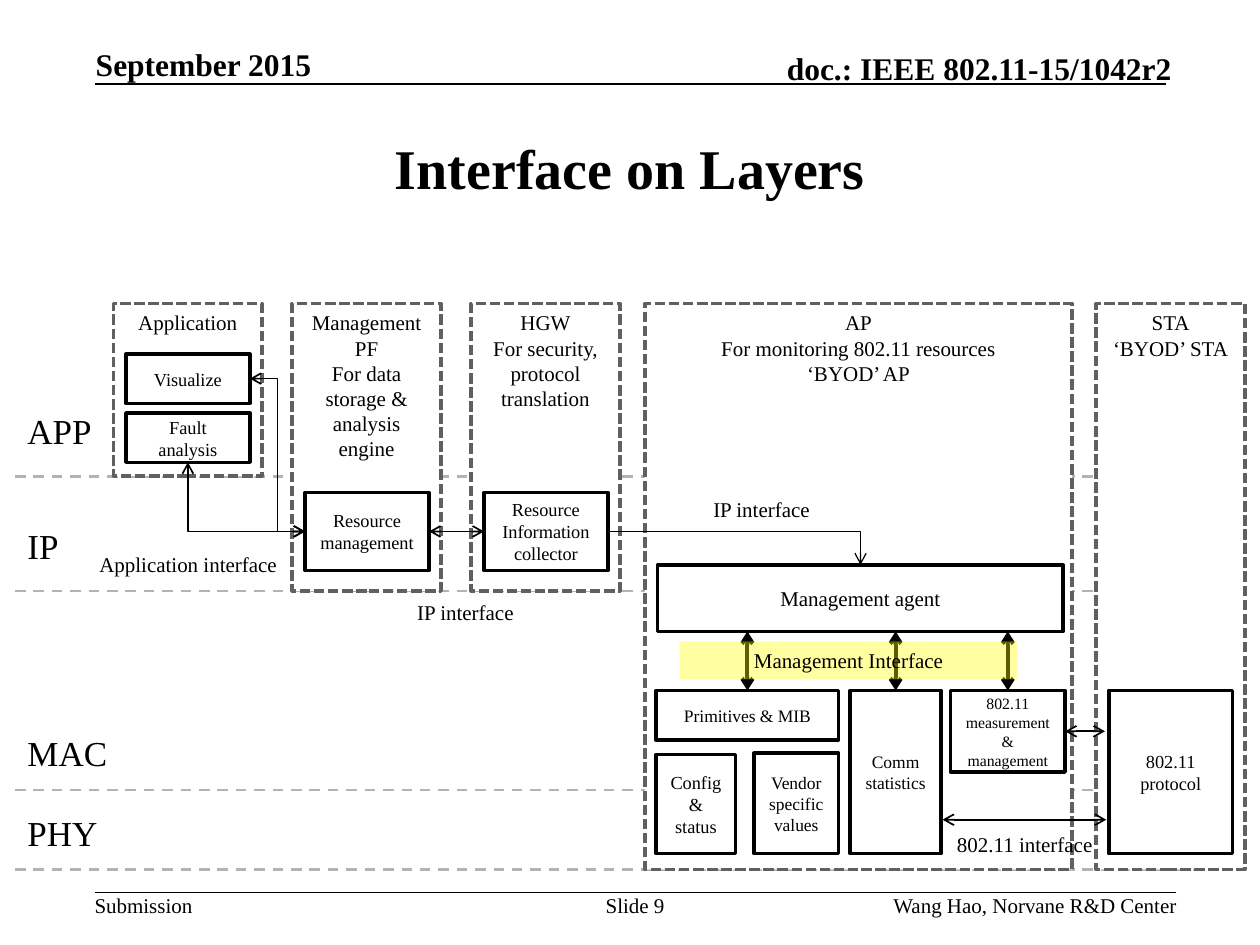
import pptx
import pptx.dml.color
import pptx.enum.dml
import pptx.enum.shapes
import pptx.enum.text
import pptx.oxml
import pptx.oxml.ns
import pptx.util
from lxml import etree

Pt = pptx.util.Pt
RGBColor = pptx.dml.color.RGBColor
Align = pptx.enum.text.PP_ALIGN
Anchor = pptx.enum.text.MSO_ANCHOR
Dash = pptx.enum.dml.MSO_LINE
Connector = pptx.enum.shapes.MSO_CONNECTOR
qn = pptx.oxml.ns.qn

BLACK = RGBColor(0, 0, 0)
WHITE = RGBColor(255, 255, 255)
GRAY = RGBColor(0x60, 0x60, 0x60)
LIGHT_GRAY = RGBColor(0xB3, 0xB3, 0xB3)
YELLOW = RGBColor(255, 255, 0)
FONT = "Times New Roman"
TOP, BOTTOM_EDGE = 173.5, 496.8
TOP_SIDE, LEFT_SIDE, BOTTOM_SIDE, RIGHT_SIDE = range(4)


def write_text(shape, text, size, align=Align.CENTER, anchor=Anchor.TOP, bold=False):
    frame = shape.text_frame
    frame.text = text
    frame.word_wrap = True
    frame.vertical_anchor = anchor
    for para in frame.paragraphs:
        para.alignment = align
        for span in para.runs:
            span.font.name = FONT
            span.font.size = Pt(size)
            span.font.bold = bold
            span.font.color.rgb = BLACK


def add_rectangle(page, bounds, fill):
    kind = pptx.enum.shapes.MSO_SHAPE.RECTANGLE
    box = page.shapes.add_shape(kind, *[Pt(value) for value in bounds])
    box.shadow.inherit = False
    box.fill.solid()
    box.fill.fore_color.rgb = fill
    return box


def add_column(page, left, width, height, text):
    box = add_rectangle(page, (left, TOP, width, height), WHITE)
    box.line.color.rgb = GRAY
    box.line.width = Pt(2)
    box.line.dash_style = Dash.SQUARE_DOT
    write_text(box, text, 12)


def add_module(page, bounds, text, size=10.5):
    box = add_rectangle(page, bounds, WHITE)
    box.line.color.rgb = BLACK
    box.line.width = Pt(2)
    write_text(box, text, size, anchor=Anchor.MIDDLE)
    return box


def add_highlight(page, bounds, text):
    box = add_rectangle(page, bounds, YELLOW)
    color = box.element.spPr.find(".//" + qn("a:srgbClr"))
    etree.SubElement(color, qn("a:alpha"), val="37000")
    box.line.fill.background()
    write_text(box, text, 12)


def add_label(page, bounds, text, size=12, align=Align.CENTER):
    box = page.shapes.add_textbox(*[Pt(value) for value in bounds])
    write_text(box, text, size, align)
    return box


def add_margin_text(page, bounds, text, align, size=12, bold=False, anchor=Anchor.TOP):
    box = add_label(page, bounds, text)
    write_text(box, text, size, align, anchor, bold)
    frame = box.text_frame
    frame.margin_left = frame.margin_right = frame.margin_top = frame.margin_bottom = 0


def add_line(page, start, end, color=BLACK, width=1, dash=None, heads=(),
             kind=Connector.STRAIGHT, begin=None, finish=None):
    line = page.shapes.add_connector(kind, *[Pt(value) for value in start + end])
    if begin:
        line.begin_connect(*begin)
    if finish:
        line.end_connect(*finish)
    line.line.color.rgb = color
    line.line.width = Pt(width)
    if dash:
        line.line.dash_style = dash
    properties = line.element.spPr
    for head in heads:
        etree.SubElement(properties.find(qn("a:ln")), qn(head), type="arrow")
    etree.SubElement(properties, qn("a:effectLst"))
    return line


def add_joined(page, begin, finish, kind=Connector.STRAIGHT, heads=("a:headEnd", "a:tailEnd"),
               width=1, single_bend=False):
    line = add_line(page, (0, 0), (0, 0), width=width, heads=heads,
                    kind=kind, begin=begin, finish=finish)
    if single_bend:
        line.element.spPr.find(qn("a:prstGeom")).set("prst", "bentConnector2")


def add_frame(page):
    add_line(page, (54, 48.2), (666, 48.2))
    add_line(page, (54, 510), (672, 510))
    add_margin_text(page, (54.7, 25.9, 147.6, 21.6), "September 2015", Align.LEFT,
                    18, True, Anchor.BOTTOM)
    add_margin_text(page, (393.8, 28, 275.8, 21.6), "doc.: IEEE 802.11-15/1042r2", Align.RIGHT,
                    18, True, Anchor.BOTTOM)
    add_margin_text(page, (54, 510, 70, 14.4), "Submission", Align.LEFT)
    add_margin_text(page, (342, 510, 41.8, 14.4), "Slide 9", Align.CENTER)
    add_margin_text(page, (422, 510, 250.5, 14.4), "Wang Hao, Norvane R&D Center", Align.RIGHT)


def add_title(page, text):
    title = page.shapes.title
    title.left, title.top, title.width, title.height = Pt(54), Pt(54), Pt(612), Pt(83.5)
    write_text(title, text, 32, anchor=Anchor.MIDDLE, bold=True)


def main():
    deck = pptx.Presentation()
    deck.slide_width, deck.slide_height = Pt(720), Pt(540)
    page = deck.slides.add_slide(deck.slide_layouts[5])
    add_frame(page)
    add_title(page, "Interface on Layers")

    layers = [("APP", 230.4, 272.4), ("IP", 295.9, 337.7),
              ("MAC", 414.7, 451.4), ("PHY", 460.1, BOTTOM_EDGE)]
    for name, top, boundary in layers:
        add_line(page, (8.6, boundary), (692, boundary), LIGHT_GRAY, 1.5, Dash.DASH)
        add_label(page, (8.6, top, 73.4, 31.7), name, 20, Align.LEFT)

    full_height = BOTTOM_EDGE - TOP
    columns = [
        (64.8, 85, 98.6, "Application"),
        (167, 85, 164.2, "Management PF\nFor data storage & analysis engine"),
        (269.2, 85, 164.2, "HGW\nFor security, protocol translation"),
        (368.6, 244, full_height, "AP\nFor monitoring 802.11 resources\n‘BYOD’ AP"),
        (626.4, 85, full_height, "STA\n‘BYOD’ STA"),
    ]
    for column in columns:
        add_column(page, *column)

    visualize = add_module(page, (72, 202.3, 70.8, 28.2), "Visualize")
    fault = add_module(page, (72, 236, 70.8, 28.2), "Fault analysis")
    resource = add_module(page, (174.4, 281.4, 70.8, 44.6), "Resource management")
    collector = add_module(page, (276.6, 281.4, 70.8, 44.6), "Resource Information collector")
    agent = add_module(page, (375.8, 322.8, 231.8, 38), "Management agent", 12)
    primitives = add_module(page, (375, 394.6, 104.2, 28.4), "Primitives & MIB", 10)
    statistics = add_module(page, (485.8, 394.6, 52, 93.2), "Comm statistics", 10)
    measurement = add_module(page, (543.2, 394.6, 65.4, 46.6),
                             "802.11 measurement & management", 9)
    add_module(page, (375, 431.2, 45.4, 56.6), "Config\n&\nstatus")
    add_module(page, (430.8, 430.4, 48.4, 57.4), "Vendor specific values", 10)
    add_module(page, (633.6, 394.6, 70.8, 93.2), "802.11 protocol")

    add_joined(page, (resource, RIGHT_SIDE), (collector, LEFT_SIDE))
    add_joined(page, (resource, LEFT_SIDE), (visualize, RIGHT_SIDE), Connector.ELBOW)
    add_joined(page, (resource, LEFT_SIDE), (fault, BOTTOM_SIDE), Connector.ELBOW,
               single_bend=True)
    add_joined(page, (collector, RIGHT_SIDE), (agent, TOP_SIDE), Connector.ELBOW,
               ("a:tailEnd",), 0.75, True)

    both_ends = ("a:headEnd", "a:tailEnd")
    for module in (primitives, statistics, measurement):
        center = (module.left + module.width / 2) / Pt(1)
        add_line(page, (center, 394.6), (center, 360.8), width=2.25, heads=both_ends,
                 begin=(module, TOP_SIDE))
    add_line(page, (608.6, 417.9), (631.4, 417.9), heads=both_ends,
             begin=(measurement, RIGHT_SIDE))
    add_line(page, (538.6, 468.4), (632.2, 468.4), heads=both_ends)

    add_highlight(page, (388.4, 366.5, 193, 21.8), "Management Interface")
    labels = [(48.2, 311.8, 118.8, "Application interface"), (206.6, 339, 118.8, "IP interface"),
              (375.8, 280.1, 118.8, "IP interface"), (539, 471.6, 93.2, "802.11 interface")]
    for left, top, width, text in labels:
        add_label(page, (left, top, width, 21.8), text)

    deck.save("out.pptx")


if __name__ == "__main__":
    main()
